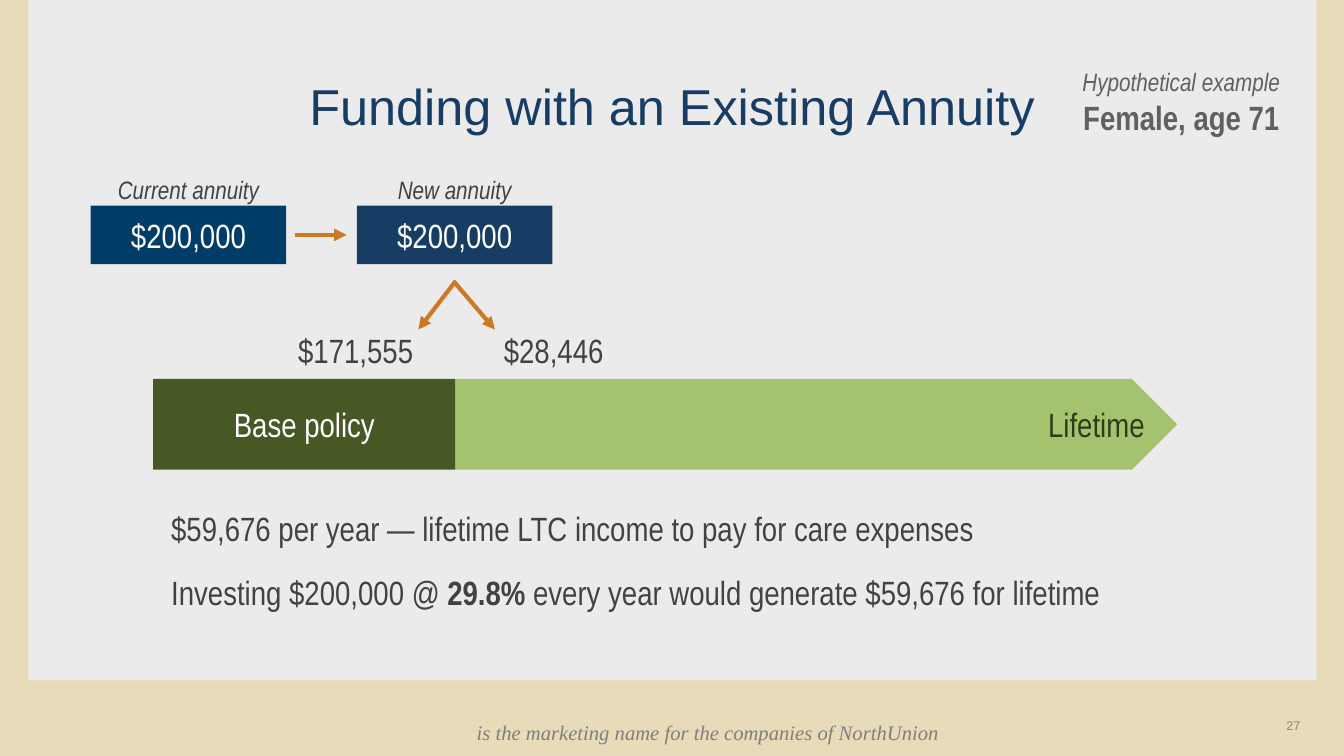
from dataclasses import dataclass

from lxml import etree
from pptx import Presentation
from pptx.dml.color import RGBColor
from pptx.enum.shapes import MSO_CONNECTOR, MSO_SHAPE
from pptx.enum.text import MSO_ANCHOR, PP_ALIGN
from pptx.oxml.ns import qn
from pptx.slide import Slide
from pptx.text.text import TextFrame
from pptx.util import Pt

RECTANGLE, PENTAGON = MSO_SHAPE.RECTANGLE, MSO_SHAPE.PENTAGON
STRAIGHT = MSO_CONNECTOR.STRAIGHT
LEFT, CENTER, RIGHT = PP_ALIGN.LEFT, PP_ALIGN.CENTER, PP_ALIGN.RIGHT
TOP, MIDDLE, BOTTOM = MSO_ANCHOR.TOP, MSO_ANCHOR.MIDDLE, MSO_ANCHOR.BOTTOM


@dataclass(frozen=True)
class Theme:
    sand: str = "E8DBBA"
    panel: str = "EBEBEB"
    navy: str = "173D65"
    blue: str = "023D69"
    orange: str = "CD7824"
    dark_green: str = "465925"
    light_green: str = "A5C36E"
    lifetime_text: str = "2F3C18"
    white: str = "FFFFFF"
    body_text: str = "424242"
    example_text: str = "606060"
    footer_text: str = "7F7F7F"
    number_text: str = "898989"
    sans: str = "Arial"
    narrow: str = "Arial Narrow"
    serif: str = "Times New Roman"
    title_size: float = 36
    body_size: float = 24
    caption_size: float = 18
    footer_size: float = 14.7
    number_size: float = 9
    arrow_width: float = 3


THEME = Theme()


@dataclass(frozen=True)
class Box:
    left: float
    top: float
    width: float
    height: float


@dataclass(frozen=True)
class Run:
    text: str
    color: str = THEME.body_text
    size: float = THEME.body_size
    font: str = THEME.narrow
    bold: bool = False
    italic: bool = False


@dataclass(frozen=True)
class Label:
    box: Box
    paragraphs: tuple[tuple[Run, ...], ...]
    alignment: PP_ALIGN = LEFT
    anchor: MSO_ANCHOR = TOP
    gap: float = 0


@dataclass(frozen=True)
class Block:
    label: Label
    fill: str
    preset: MSO_SHAPE = RECTANGLE


@dataclass(frozen=True)
class Arrow:
    start: tuple[float, float]
    end: tuple[float, float]


def write_text(frame: TextFrame, label: Label) -> None:
    frame.word_wrap = True
    frame.vertical_anchor = label.anchor
    for index, runs in enumerate(label.paragraphs):
        paragraph = frame.add_paragraph() if index else frame.paragraphs[0]
        paragraph.alignment = label.alignment
        if index:
            paragraph.space_before = Pt(label.gap)
        for item in runs:
            run = paragraph.add_run()
            run.text = item.text
            run.font.name = item.font
            run.font.size = Pt(item.size)
            run.font.bold = item.bold
            run.font.italic = item.italic
            run.font.color.rgb = RGBColor.from_string(item.color)


def draw_label(slide: Slide, label: Label) -> None:
    box = label.box
    shape = slide.shapes.add_textbox(Pt(box.left), Pt(box.top), Pt(box.width), Pt(box.height))
    write_text(shape.text_frame, label)


def draw_block(slide: Slide, block: Block) -> None:
    box = block.label.box
    shape = slide.shapes.add_shape(
        block.preset, Pt(box.left), Pt(box.top), Pt(box.width), Pt(box.height)
    )
    shape.shadow.inherit = False
    shape.fill.solid()
    shape.fill.fore_color.rgb = RGBColor.from_string(block.fill)
    shape.line.fill.background()
    write_text(shape.text_frame, block.label)


def draw_arrow(slide: Slide, arrow: Arrow) -> None:
    connector = slide.shapes.add_connector(
        STRAIGHT, *(Pt(value) for value in (*arrow.start, *arrow.end))
    )
    connector.line.width = Pt(THEME.arrow_width)
    connector.line.color.rgb = RGBColor.from_string(THEME.orange)
    properties = connector.line._get_or_add_ln()
    etree.SubElement(properties, qn("a:tailEnd"), type="triangle")
    etree.SubElement(connector._element.spPr, qn("a:effectLst"))


def centered(box: Box, run: Run) -> Label:
    return Label(box, ((run,),), CENTER, MIDDLE)


def draw_annuity(slide: Slide, left: float, caption: str, fill: str) -> None:
    width = 139.7
    caption_run = Run(caption, size=THEME.caption_size, italic=True)
    draw_label(slide, Label(Box(left, 120.7, width, 28.8), ((caption_run,),), CENTER))
    amount = centered(Box(left, 146.9, width, 41.8), Run("$200,000", THEME.white))
    draw_block(slide, Block(amount, fill))


BAR_TOP, BAR_HEIGHT, BAR_SPLIT = 270.7, 64.8, 325.4

BLOCKS = (
    Block(Label(Box(20.2, 0, 920.2, 486), ()), THEME.panel),
    Block(
        Label(
            Box(BAR_SPLIT, BAR_TOP, 515.5, BAR_HEIGHT),
            ((Run("Lifetime", THEME.lifetime_text),),),
            RIGHT,
            MIDDLE,
        ),
        THEME.light_green,
        PENTAGON,
    ),
    Block(
        centered(
            Box(BAR_SPLIT - 216, BAR_TOP, 216, BAR_HEIGHT), Run("Base policy", THEME.white)
        ),
        THEME.dark_green,
    ),
)

LABELS = (
    Label(
        Box(333.4, 510.5, 475.2, 25.2),
        ((Run("is the marketing name for the companies of NorthUnion",
              THEME.footer_text, THEME.footer_size, THEME.serif, italic=True),),),
    ),
    Label(
        Box(823.7, 498.2, 112.3, 28.8),
        ((Run("27", THEME.number_text, THEME.number_size, THEME.sans),),),
        RIGHT,
        BOTTOM,
    ),
    centered(
        Box(48.2, 37.4, 864, 75.6),
        Run("Funding with an Existing Annuity", THEME.navy, THEME.title_size, THEME.sans),
    ),
    Label(
        Box(739.4, 43.9, 208.8, 58.3),
        (
            (Run("Hypothetical example", THEME.example_text, THEME.caption_size, italic=True),),
            (Run("Female, age 71", THEME.example_text, bold=True),),
        ),
        CENTER,
    ),
    Label(Box(205.9, 232.2, 100, 36), ((Run("$171,555"),),)),
    Label(Box(352.8, 232.2, 246.2, 36), ((Run("$28,446"),),)),
    Label(
        Box(115.2, 359.3, 840.2, 113.8),
        (
            (Run("$59,676 per year — lifetime LTC income to pay for care expenses"),),
            (
                Run("Investing $200,000 @ "),
                Run("29.8% ", bold=True),
                Run("every year would generate $59,676 for lifetime"),
            ),
        ),
        gap=17,
    ),
)

ARROWS = (
    Arrow((211, 167.8), (247.7, 167.8)),
    Arrow((325.4, 200.9), (298.8, 235.4)),
    Arrow((324, 200.9), (353.5, 235.4)),
)


def main() -> None:
    presentation = Presentation()
    presentation.slide_width, presentation.slide_height = Pt(960), Pt(540)
    slide = presentation.slides.add_slide(presentation.slide_layouts[6])
    slide.background.fill.solid()
    slide.background.fill.fore_color.rgb = RGBColor.from_string(THEME.sand)
    for block in BLOCKS:
        draw_block(slide, block)
    draw_annuity(slide, 64.8, "Current annuity", THEME.blue)
    draw_annuity(slide, 254.9, "New annuity", THEME.navy)
    for label in LABELS:
        draw_label(slide, label)
    for arrow in ARROWS:
        draw_arrow(slide, arrow)
    presentation.save("out.pptx")


if __name__ == "__main__":
    main()
